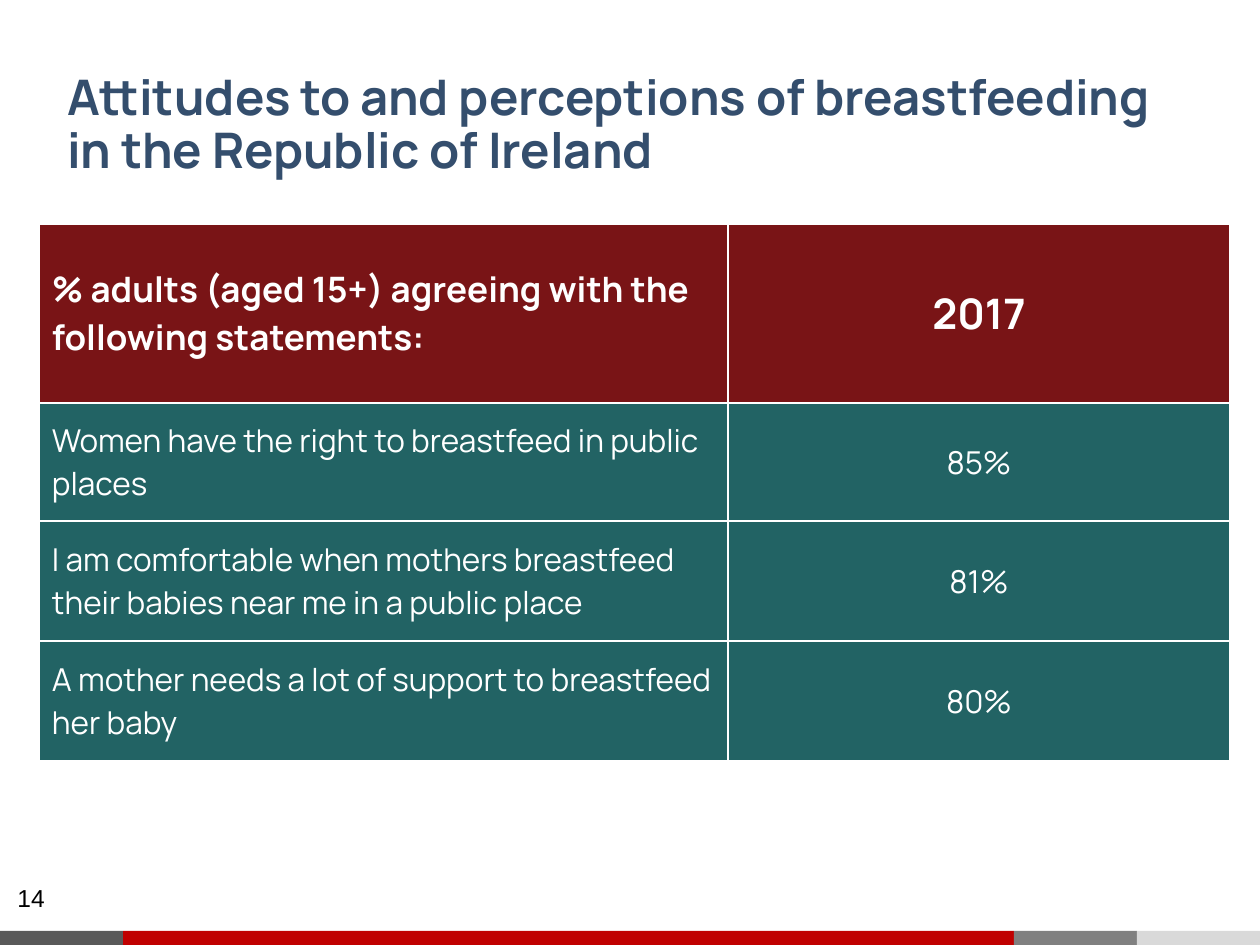
from dataclasses import dataclass

from lxml import etree
from pptx import Presentation
from pptx.dml.color import RGBColor
from pptx.enum.shapes import MSO_SHAPE
from pptx.enum.text import MSO_ANCHOR, MSO_AUTO_SIZE, PP_ALIGN
from pptx.oxml.ns import qn
from pptx.util import Emu, Pt

RECT = MSO_SHAPE.RECTANGLE
MIDDLE, BOTTOM = MSO_ANCHOR.MIDDLE, MSO_ANCHOR.BOTTOM
LEFT, CENTER = PP_ALIGN.LEFT, PP_ALIGN.CENTER
FIT_NONE, FIT_SHAPE = MSO_AUTO_SIZE.NONE, MSO_AUTO_SIZE.SHAPE_TO_FIT_TEXT

WHITE = RGBColor(0xFF, 0xFF, 0xFF)
BLACK = RGBColor(0x00, 0x00, 0x00)
NAVY = RGBColor(0x34, 0x4E, 0x6D)
MAROON = RGBColor(0x79, 0x14, 0x16)
TEAL = RGBColor(0x22, 0x63, 0x64)
RED = RGBColor(0xC0, 0x00, 0x00)
DARK_GRAY = RGBColor(0x59, 0x59, 0x59)
MID_GRAY = RGBColor(0x80, 0x80, 0x80)
LIGHT_GRAY = RGBColor(0xD9, 0xD9, 0xD9)

PX_PER_INCH = 126
WIDTH, HEIGHT = 1260, 945
INSET = 13
BAR_HEIGHT = 14
COLUMN_WIDTHS = (689, 502)


@dataclass(frozen=True)
class Band:
    width: int
    color: RGBColor


@dataclass(frozen=True)
class Row:
    statement: str
    value: str
    height: int
    fill: RGBColor = TEAL
    sizes: tuple[int, int] = (18, 18)
    bold: bool = False


BANDS = (Band(123, DARK_GRAY), Band(891, RED), Band(123, MID_GRAY), Band(123, LIGHT_GRAY))

ROWS = (
    Row("% adults (aged 15+) agreeing with the following statements:", "2017",
        179, MAROON, (20, 24), True),
    Row("Women have the right to breastfeed in public places", "85%", 118),
    Row("I am comfortable when mothers breastfeed their babies near me in a public place",
        "81%", 120),
    Row("A mother needs a lot of support to breastfeed her baby", "80%", 120),
)


def px(n: int) -> Emu:
    return Emu(round(n * 914400 / PX_PER_INCH))


def put_text(tf, text: str, *, size: int, color: RGBColor, font: str = "Manrope",
             bold: bool = False, align=LEFT, spacing: float = 1.0) -> None:
    p = tf.paragraphs[0]
    p.alignment = align
    p.line_spacing = spacing
    r = p.add_run()
    r.text = text
    r.font.name = font
    r.font.size = Pt(size)
    r.font.bold = bold
    r.font.color.rgb = color


def set_margins(box) -> None:
    box.margin_left = box.margin_right = px(INSET)
    box.margin_top = box.margin_bottom = px(INSET)


def set_borders(cell, color: RGBColor) -> None:
    tc_pr = cell._tc.get_or_add_tcPr()
    for i, side in enumerate(("a:lnL", "a:lnR", "a:lnT", "a:lnB")):
        ln = etree.Element(qn(side), w=str(Pt(1)))
        fill = etree.SubElement(ln, qn("a:solidFill"))
        etree.SubElement(fill, qn("a:srgbClr"), val=str(color))
        tc_pr.insert(i, ln)


def draw_bands(slide) -> None:
    left = 0
    for band in BANDS:
        s = slide.shapes.add_shape(RECT, px(left), px(HEIGHT - BAR_HEIGHT),
                                   px(band.width), px(BAR_HEIGHT))
        s.shadow.inherit = False
        s.fill.solid()
        s.fill.fore_color.rgb = band.color
        s.line.fill.background()
        left += band.width


def draw_title(slide) -> None:
    s = slide.shapes.title
    s.left, s.top, s.width, s.height = px(54), px(91), px(1121), px(101)
    tf = s.text_frame
    tf.word_wrap = True
    tf.auto_size = FIT_NONE
    tf.vertical_anchor = BOTTOM
    set_margins(tf)
    put_text(tf, "Attitudes to and perceptions of breastfeeding in the Republic of Ireland",
             size=28, color=NAVY, bold=True, spacing=0.9)


def draw_page_number(slide) -> None:
    tf = slide.shapes.add_textbox(px(5), px(877), px(69), px(43)).text_frame
    tf.word_wrap = True
    tf.auto_size = FIT_SHAPE
    put_text(tf, "14", size=14, color=BLACK, font="Arial")


def draw_table(slide) -> None:
    table = slide.shapes.add_table(
        len(ROWS), len(COLUMN_WIDTHS), px(39), px(224),
        px(sum(COLUMN_WIDTHS)), px(sum(row.height for row in ROWS))).table
    table.horz_banding = False
    for column, width in zip(table.columns, COLUMN_WIDTHS):
        column.width = px(width)
    for i, row in enumerate(ROWS):
        table.rows[i].height = px(row.height)
        texts = (row.statement, row.value)
        for j, (text, size, align) in enumerate(zip(texts, row.sizes, (LEFT, CENTER))):
            cell = table.cell(i, j)
            cell.fill.solid()
            cell.fill.fore_color.rgb = row.fill
            cell.vertical_anchor = MIDDLE
            set_margins(cell)
            set_borders(cell, WHITE)
            put_text(cell.text_frame, text, size=size, color=WHITE,
                     bold=row.bold, align=align)


def main() -> None:
    prs = Presentation()
    prs.slide_width, prs.slide_height = px(WIDTH), px(HEIGHT)
    slide = prs.slides.add_slide(prs.slide_layouts[5])
    draw_bands(slide)
    draw_title(slide)
    draw_page_number(slide)
    draw_table(slide)
    prs.save("out.pptx")


if __name__ == "__main__":
    main()
